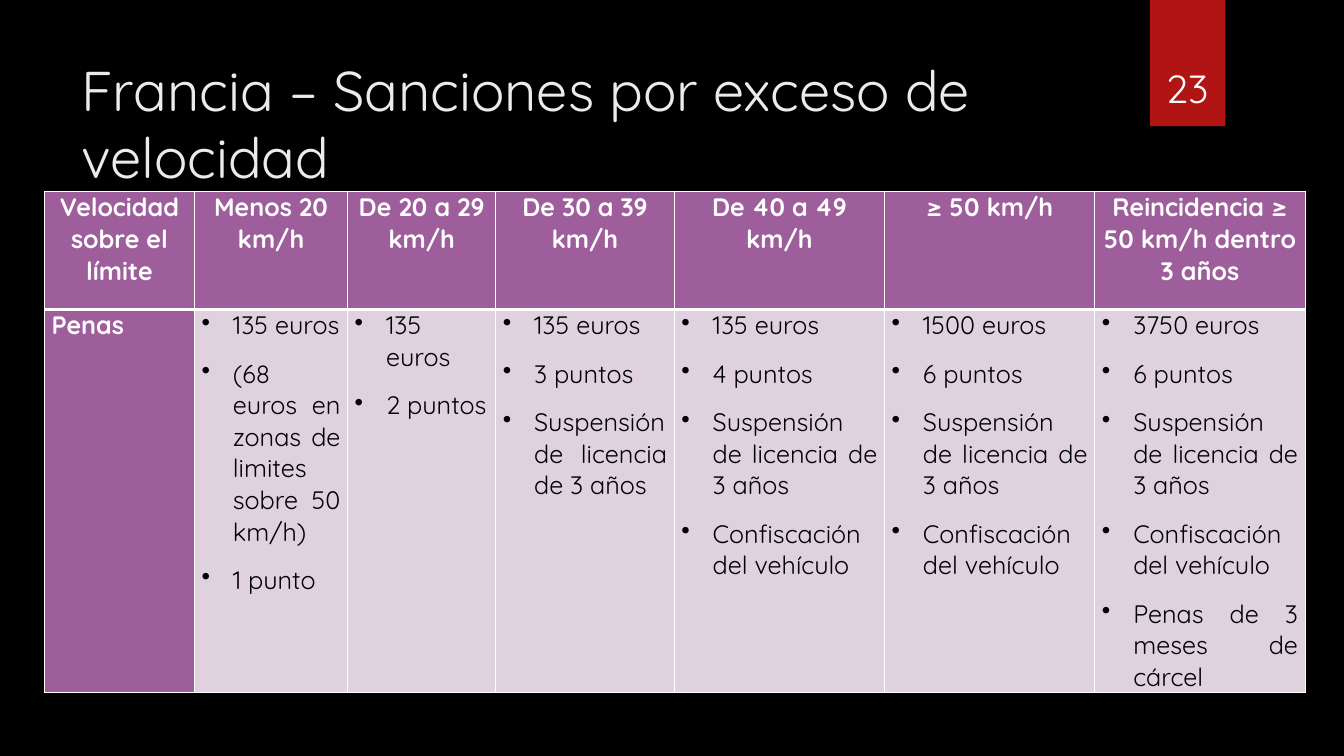
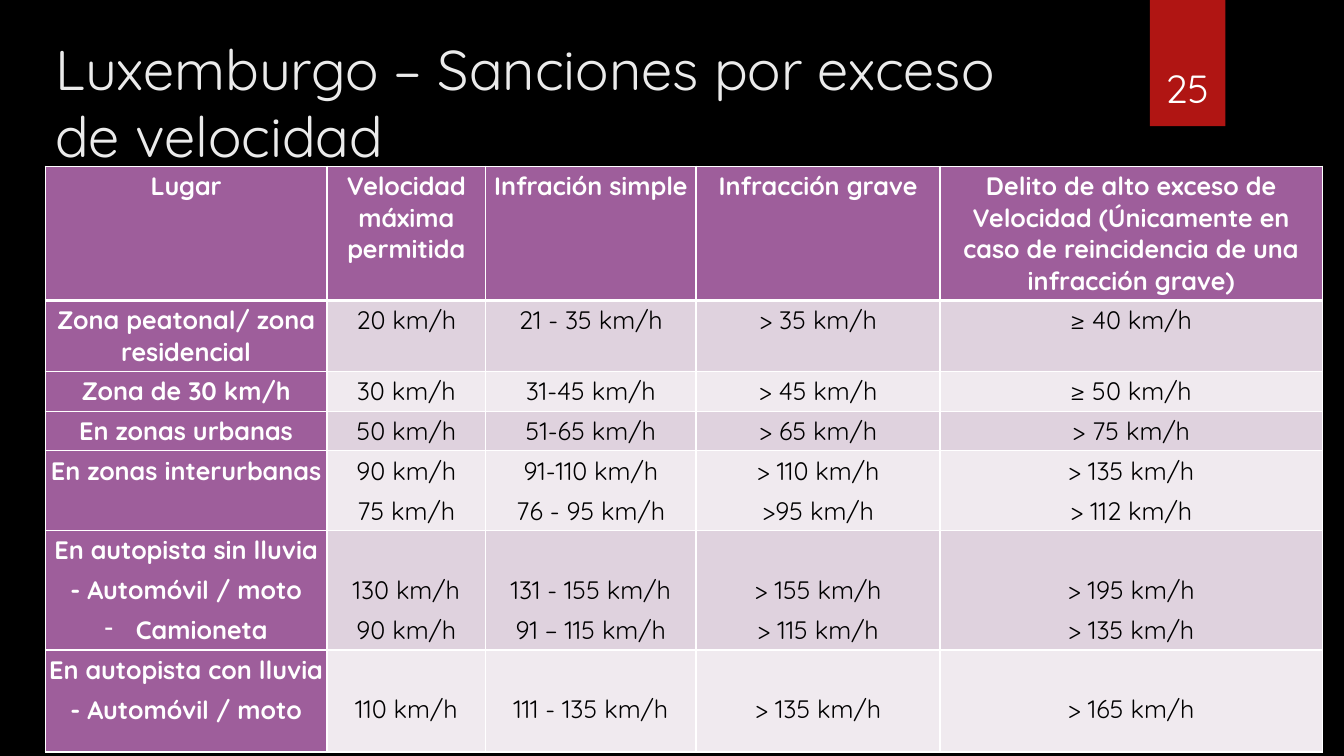
"""Build two slides on speeding penalties in France and Luxembourg."""
from lxml import etree
from pptx import Presentation
from pptx.dml.color import RGBColor
from pptx.enum.shapes import MSO_SHAPE as Shape
from pptx.enum.text import MSO_ANCHOR as Anchor, PP_ALIGN as Align
from pptx.oxml.ns import qn
from pptx.util import Cm, Pt

FONT = "Quicksand"
BLACK, WHITE, PALE, RED = "000000", "FFFFFF", "EBEBEB", "B01513"
HEAD, BANDS = "9E5E9B", ("DFD2DE", "F0EAEF")
LINE_STEP = 1.0


def dots(*texts):
    return [("•", text) for text in texts]


BAN = "Suspensión de licencia de 3 años"
SEIZE = "Confiscación del vehículo"
CAR = "- Automóvil / moto"

SLIDES = [
    {
        "title": "Francia – Sanciones por exceso de velocidad",
        "number": "23",
        "title_at": (1.8, 1.27),
        "table_at": (1.12, 4.83),
        "cols": [3.78, 3.86, 3.73, 4.5, 5.3, 5.3, 5.3],
        "rows": [2.97, 9.63],
        "pad": (0.18, 0),
        "gap": 12,
        "align": Align.JUSTIFY,
        "cells": [
            [["Velocidad sobre el límite"], ["Menos 20 km/h"], ["De 20 a 29 km/h"],
             ["De 30 a 39 km/h"], ["De 40 a 49 km/h"], ["≥ 50 km/h"],
             ["Reincidencia ≥ 50 km/h dentro 3 años"]],
            [["Penas"],
             dots("135 euros", "(68 euros en zonas de limites sobre 50 km/h)", "1 punto"),
             dots("135 euros", "2 puntos"),
             dots("135 euros", "3 puntos", BAN),
             dots("135 euros", "4 puntos", BAN, SEIZE),
             dots("1500 euros", "6 puntos", BAN, SEIZE),
             dots("3750 euros", "6 puntos", BAN, SEIZE, "Penas de 3 meses de cárcel")],
        ],
    },
    {
        "title": "Luxemburgo – Sanciones por exceso de velocidad",
        "number": "25",
        "title_at": (1.14, 0.74),
        "table_at": (1.14, 4.19),
        "cols": [7.1, 4.0, 5.3, 6.15, 9.63],
        "rows": [3.38, 1.76, 0.98, 0.98, 2.0, 3.0, 2.57],
        "pad": (0.1, 0.1),
        "gap": 6,
        "align": Align.CENTER,
        "cells": [
            [["Lugar"], ["Velocidad máxima permitida"], ["Infración simple"],
             ["Infracción grave"],
             ["Delito de alto exceso de Velocidad (Únicamente en caso de "
              "reincidencia de una infracción grave)"]],
            [["Zona peatonal/ zona residencial"], ["20 km/h"], ["21 - 35 km/h"],
             ["> 35 km/h"], ["≥ 40 km/h"]],
            [["Zona de 30 km/h"], ["30 km/h"], ["31-45 km/h"], ["> 45 km/h"], ["≥ 50 km/h"]],
            [["En zonas urbanas"], ["50 km/h"], ["51-65 km/h"], ["> 65 km/h"], ["> 75 km/h"]],
            [["En zonas interurbanas"], ["90 km/h", "75 km/h"],
             ["91-110 km/h", "76 - 95 km/h"], ["> 110 km/h", ">95 km/h"],
             ["> 135 km/h", "> 112 km/h"]],
            [["En autopista sin lluvia", CAR, ("-", "Camioneta")],
             [None, "130 km/h", "90 km/h"], [None, "131 - 155 km/h", "91 – 115 km/h"],
             [None, "> 155 km/h", "> 115 km/h"], [None, "> 195 km/h", "> 135 km/h"]],
            [["En autopista con lluvia", CAR], [None, "110 km/h"],
             [None, "111 - 135 km/h"], [None, "> 135 km/h"], [None, "> 165 km/h"]],
        ],
    },
]


def paint(fill, color):
    fill.solid()
    fill.fore_color.rgb = RGBColor.from_string(color)


def style(par, size, color, bold=False):
    for run in par.runs:
        font = run.font
        font.name, font.size, font.bold = FONT, Pt(size), bold
        font.color.rgb = RGBColor.from_string(color)


def mark(par, char):
    props = par._p.get_or_add_pPr()
    props.set("marL", str(Cm(0.79)))
    props.set("indent", str(-Cm(0.79)))
    etree.SubElement(props, qn("a:buChar")).set("char", char)


def edge(cell, bottom):
    props = cell._tc.get_or_add_tcPr()
    for side, width in (("L", 1), ("R", 1), ("T", 1), ("B", bottom)):
        line = etree.SubElement(props, qn(f"a:ln{side}"), w=str(Pt(width)))
        solid = etree.SubElement(line, qn("a:solidFill"))
        etree.SubElement(solid, qn("a:srgbClr"), val=WHITE)


def fill_cell(cell, items, page, row, col):
    lines = [item for item in items if item]
    drop = (len(items) - len(lines)) * LINE_STEP
    side, top = page["pad"]
    cell.margin_left = cell.margin_right = Cm(side)
    cell.margin_top, cell.margin_bottom = Cm(top + drop), Cm(top)
    head = row == 0 or col == 0
    edge(cell, 1 if row else 3)
    paint(cell.fill, HEAD if head else BANDS[(row - 1) % 2])
    frame = cell.text_frame
    for i, item in enumerate(lines):
        par = frame.add_paragraph() if i else frame.paragraphs[0]
        char, text = item if isinstance(item, tuple) else (None, item)
        par.text = text
        par.alignment = page["align"] if row else Align.CENTER
        if i:
            par.space_before = Pt(page["gap"])
        if char:
            mark(par, char)
        style(par, 18, WHITE if head else BLACK, head)


def add_grid(slide, page):
    cols, rows = page["cols"], page["rows"]
    left, top = page["table_at"]
    grid = slide.shapes.add_table(len(rows), len(cols), Cm(left), Cm(top),
                                  Cm(sum(cols)), Cm(sum(rows))).table
    grid.horz_banding = False
    for part, width in zip(grid.columns, cols):
        part.width = Cm(width)
    for part, height in zip(grid.rows, rows):
        part.height = Cm(height)
    for r, row in enumerate(page["cells"]):
        for c, items in enumerate(row):
            fill_cell(grid.cell(r, c), items, page, r, c)


def add_title(slide, page):
    title = slide.shapes.title
    left, top = page["title_at"]
    title.left, title.top, title.width, title.height = Cm(left), Cm(top), Cm(26.14), Cm(3.89)
    frame = title.text_frame
    frame.text = page["title"]
    frame.vertical_anchor = Anchor.TOP
    frame.paragraphs[0].alignment = Align.LEFT
    style(frame.paragraphs[0], 40, PALE)


def add_number(slide, text):
    frame = slide.shapes.add_textbox(Cm(28.75), Cm(0.81), Cm(2.34), Cm(2.13)).text_frame
    frame.word_wrap = True
    frame.vertical_anchor = Anchor.BOTTOM
    frame.text = text
    frame.paragraphs[0].alignment = Align.CENTER
    style(frame.paragraphs[0], 28, WHITE)


def add_tab(slide):
    tab = slide.shapes.add_shape(Shape.RECTANGLE, Cm(28.98), Cm(0), Cm(1.9), Cm(3.18))
    tab.shadow.inherit = False
    paint(tab.fill, RED)
    tab.line.fill.background()
    slide.slide_layout.shapes._spTree.append(tab._element)


def main():
    deck = Presentation()
    deck.slide_width, deck.slide_height = Cm(33.87), Cm(19.05)
    paint(deck.slide_master.background.fill, BLACK)
    for i, page in enumerate(SLIDES):
        slide = deck.slides.add_slide(deck.slide_layouts[5])
        if i == 0:
            add_tab(slide)
        add_title(slide, page)
        add_grid(slide, page)
        add_number(slide, page["number"])
    deck.save("out.pptx")


if __name__ == "__main__":
    main()
